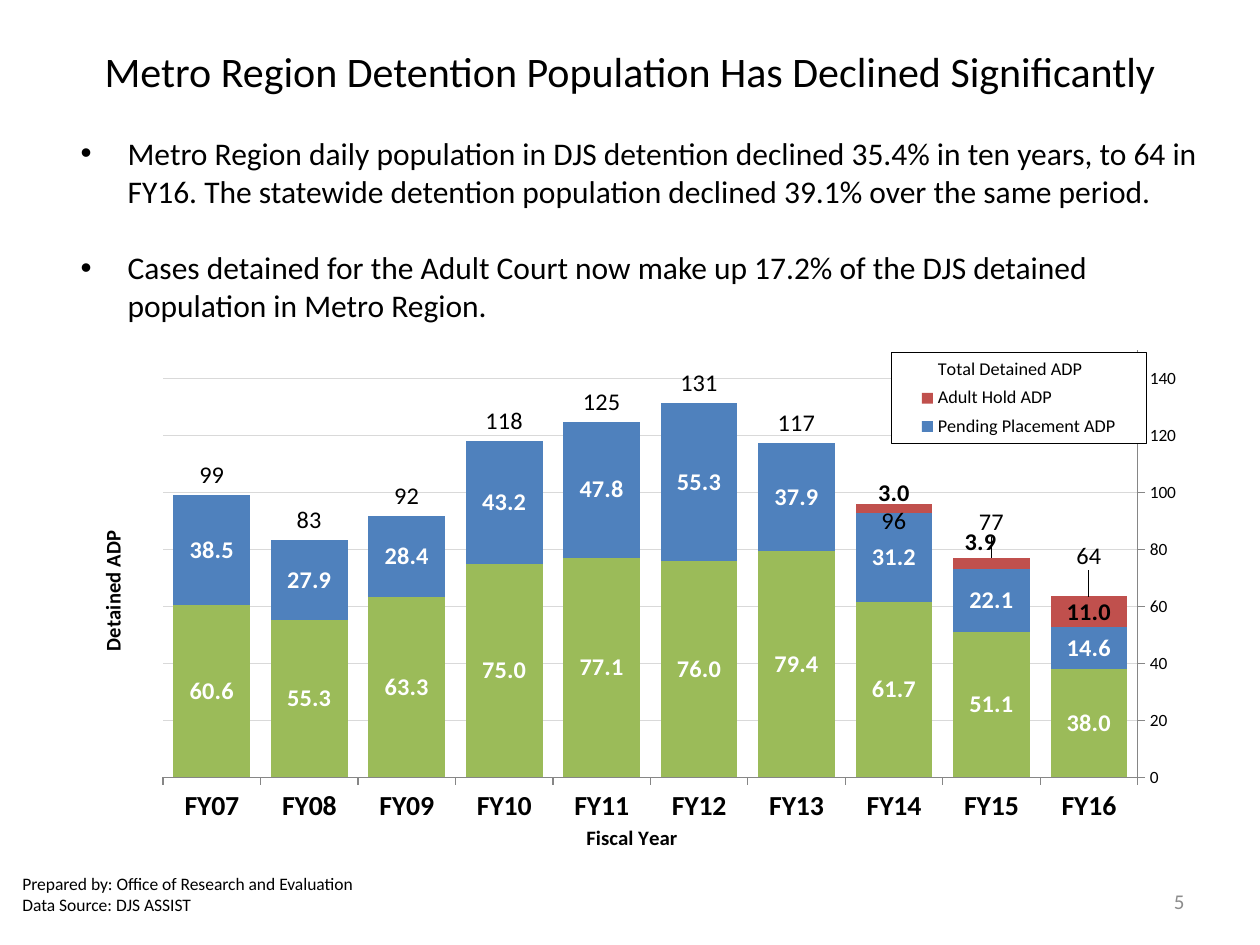
import pptx
import pptx.chart.data
import pptx.dml.color
import pptx.enum.chart
import pptx.enum.text
import pptx.oxml
import pptx.oxml.ns
import pptx.util

PX = 914400 / 126
FONT = "Calibri"
COLORS = {"text": "000000", "muted": "8C8C8C", "white": "FFFFFF", "grid": "D9D9D9",
          "axis": "868686", "green": "9BBB59", "blue": "4F81BD", "red": "C0504D"}
ALIGN = pptx.enum.text.PP_ALIGN
LABEL = pptx.enum.chart.XL_LABEL_POSITION


def style_font(font, size, color="text", bold=False):
    font.name = FONT
    font.size = pptx.util.Pt(size)
    font.bold = bold
    font.color.rgb = pptx.dml.color.RGBColor.from_string(COLORS[color])


def set_layout(previous, modes="", **fractions):
    """Put a manual layout right after the given chart element."""
    for old in previous.getparent().findall(pptx.oxml.ns.qn("c:layout")):
        old.getparent().remove(old)
    values = "".join(f'<c:{name} val="{value}"/>' for name, value in fractions.items())
    previous.addnext(pptx.oxml.parse_xml(
        f'<c:layout {pptx.oxml.ns.nsdecls("c")}><c:manualLayout>{modes}{values}'
        '</c:manualLayout></c:layout>'))


presentation = pptx.Presentation()
presentation.slide_width = pptx.util.Inches(10)
presentation.slide_height = pptx.util.Inches(7.5)
slide = presentation.slides.add_slide(presentation.slide_layouts[1])

# Title, bullets, page number and source note
title, body = slide.shapes.title, slide.placeholders[1]
number, source = (slide.shapes.add_textbox(0, 0, 0, 0) for _ in range(2))
text_blocks = [
    (title, (0, 32, 1260, 78), 24, "text", ALIGN.CENTER,
     ["Metro Region Detention Population Has Declined Significantly"]),
    (body, (68, 108, 1155, 242), 18, "text", ALIGN.LEFT,
     ["Metro Region daily population in DJS detention declined 35.4% in ten years, to 64 in "
      "FY16. The statewide detention population declined 39.1% over the same period.",
      "Cases detained for the Adult Court now make up 17.2% of the DJS detained "
      "population in Metro Region."]),
    (number, (903, 876, 294, 50), 12, "muted", ALIGN.RIGHT, ["5"]),
    (source, (10, 861, 368, 66), 10, "text", ALIGN.LEFT,
     ["Prepared by: Office of Research and Evaluation", "Data Source: DJS ASSIST"]),
]
for shape, box, size, color, alignment, lines in text_blocks:
    shape.left, shape.top, shape.width, shape.height = (round(v * PX) for v in box)
    frame = shape.text_frame
    frame.word_wrap = True
    frame.auto_size = pptx.enum.text.MSO_AUTO_SIZE.NONE
    frame.vertical_anchor = pptx.enum.text.MSO_ANCHOR.MIDDLE
    for index, line in enumerate(lines):
        paragraph = frame.add_paragraph() if index else frame.paragraphs[0]
        paragraph.alignment = alignment
        paragraph.space_before = pptx.util.Pt(0)
        run = paragraph.add_run()
        run.text = line
        style_font(run.font, size, color)

# Hanging bullets, one line apart
for paragraph in body.text_frame.paragraphs:
    properties = paragraph._p.get_or_add_pPr()
    properties.set("marL", str(round(47 * PX)))
    properties.set("indent", str(round(-47 * PX)))
body.text_frame.paragraphs[1].space_before = pptx.util.Pt(22)

# Chart data, latest year first because the axis is reversed
series_table = [
    ("Series 1", [38, 51.1, 61.7, 79.4, 76, 77.1, 75, 63.3, 55.3, 60.6],
     "green", "white", True, "0.0", LABEL.CENTER),
    ("Pending Placement ADP", [14.6, 22.1, 31.2, 37.9, 55.3, 47.8, 43.2, 28.4, 27.9, 38.5],
     "blue", "white", True, "0.0", LABEL.CENTER),
    ("Adult Hold ADP", [11, 3.9, 3] + [None] * 7,
     "red", "text", True, "#,##0.0", LABEL.CENTER),
    ("Total Detained ADP", [64, 77, 96, 117, 131, 125, 118, 92, 83, 99],
     None, "text", False, "#,##0", LABEL.INSIDE_BASE),
]
chart_data = pptx.chart.data.CategoryChartData()
chart_data.categories = [f"FY{year:02}" for year in range(16, 6, -1)]
for name, values, *_ in series_table:
    chart_data.add_series(name, values)
chart = slide.shapes.add_chart(
    pptx.enum.chart.XL_CHART_TYPE.COLUMN_STACKED,
    *(round(v * PX) for v in (84, 325, 1092, 532)), chart_data).chart
style_font(chart.font, 10)
chart.has_title = False
plot = chart.plots[0]
plot.gap_width, plot.overlap = 27, 100
plot.vary_by_categories = False

# Series fills and labels
for series, (_, _, fill, color, bold, number_format, position) in zip(plot.series, series_table):
    if fill:
        series.format.fill.solid()
        series.format.fill.fore_color.rgb = pptx.dml.color.RGBColor.from_string(COLORS[fill])
    else:
        series.format.fill.background()
    series.format.line.fill.background()
    labels = series.data_labels
    labels.show_value = True
    labels.number_format = number_format
    labels.number_format_is_linked = False
    labels.position = position
    style_font(labels.font, 14, color, bold)

# Labels moved off their usual place: series, point, x and y shift
for series_index, point_index, x, y in [(2, 1, -0.01, -0.04), (2, 2, 0, -0.03),
                                        (3, 0, 0, -0.04), (3, 1, 0, -0.03), (3, 2, 0, 0.07)]:
    _, _, _, color, bold, number_format, position = series_table[series_index]
    label = plot.series[series_index].points[point_index].data_label
    style_font(label.font, 14, color, bold)
    label.position = position
    label_index = chart.element.xpath(
        f".//c:ser[c:idx/@val={series_index}]/c:dLbls/c:dLbl/c:idx[@val={point_index}]")[0]
    label_index.addnext(pptx.oxml.parse_xml(
        f'<c:numFmt {pptx.oxml.ns.nsdecls("c")} formatCode="{number_format}" sourceLinked="0"/>'))
    set_layout(label_index, x=x, y=y)

# Axes
category_axis, value_axis = chart.category_axis, chart.value_axis
category_axis.reverse_order = True
category_axis.crosses = pptx.enum.chart.XL_AXIS_CROSSES.MAXIMUM
value_axis.minimum_scale, value_axis.maximum_scale, value_axis.major_unit = 0, 150, 20
value_axis.tick_labels.number_format = "0"
value_axis.tick_labels.number_format_is_linked = False
value_axis.has_major_gridlines = True
grid_line = value_axis.major_gridlines.format.line
grid_line.width = pptx.util.Pt(0.75)
grid_line.color.rgb = pptx.dml.color.RGBColor.from_string(COLORS["grid"])
for axis, caption, size, bold, x, y in [(category_axis, "Fiscal Year", 16, True, 0.46, 0.95),
                                        (value_axis, "Detained ADP", 10, False, 0.01, 0.39)]:
    style_font(axis.tick_labels.font, size, bold=bold)
    axis.major_tick_mark = pptx.enum.chart.XL_TICK_MARK.OUTSIDE
    axis.minor_tick_mark = pptx.enum.chart.XL_TICK_MARK.NONE
    axis.format.line.color.rgb = pptx.dml.color.RGBColor.from_string(COLORS["axis"])
    run = axis.axis_title.text_frame.paragraphs[0].add_run()
    run.text = caption
    style_font(run.font, 12, bold=True)
EDGE_MODES = '<c:xMode val="edge"/><c:yMode val="edge"/>'
for axis_tag, x, y in [("catAx", 0.46, 0.95), ("valAx", 0.01, 0.39)]:
    set_layout(chart.element.xpath(f".//c:{axis_tag}/c:title/c:tx")[0], EDGE_MODES, x=x, y=y)

# Legend box without the first series
chart.has_legend = True
legend = chart.legend
legend.position = pptx.enum.chart.XL_LEGEND_POSITION.RIGHT
legend.include_in_layout = True
style_font(legend.font, 10.5)
legend_position = chart.element.xpath(".//c:legend/c:legendPos")[0]
set_layout(legend_position, EDGE_MODES, x=0.745, y=0.053, w=0.235, h=0.175)
legend_position.addnext(pptx.oxml.parse_xml(
    f'<c:legendEntry {pptx.oxml.ns.nsdecls("c")}><c:idx val="0"/><c:delete val="1"/>'
    '</c:legendEntry>'))
chart.element.xpath(".//c:legend/c:overlay")[0].addnext(pptx.oxml.parse_xml(
    f'<c:spPr {pptx.oxml.ns.nsdecls("c", "a")}>'
    f'<a:solidFill><a:srgbClr val="{COLORS["white"]}"/></a:solidFill><a:ln w="9525">'
    f'<a:solidFill><a:srgbClr val="{COLORS["text"]}"/></a:solidFill></a:ln></c:spPr>'))

# Plot area
plot_area = chart.element.xpath(".//c:plotArea")[0]
for old_layout in plot_area.findall(pptx.oxml.ns.qn("c:layout")):
    plot_area.remove(old_layout)
plot_area.insert(0, pptx.oxml.parse_xml(
    f'<c:layout {pptx.oxml.ns.nsdecls("c")}><c:manualLayout><c:layoutTarget val="inner"/>'
    f'{EDGE_MODES}<c:x val="0.073"/><c:y val="0.048"/><c:w val="0.899"/><c:h val="0.82"/>'
    '</c:manualLayout></c:layout>'))

presentation.save("out.pptx")
